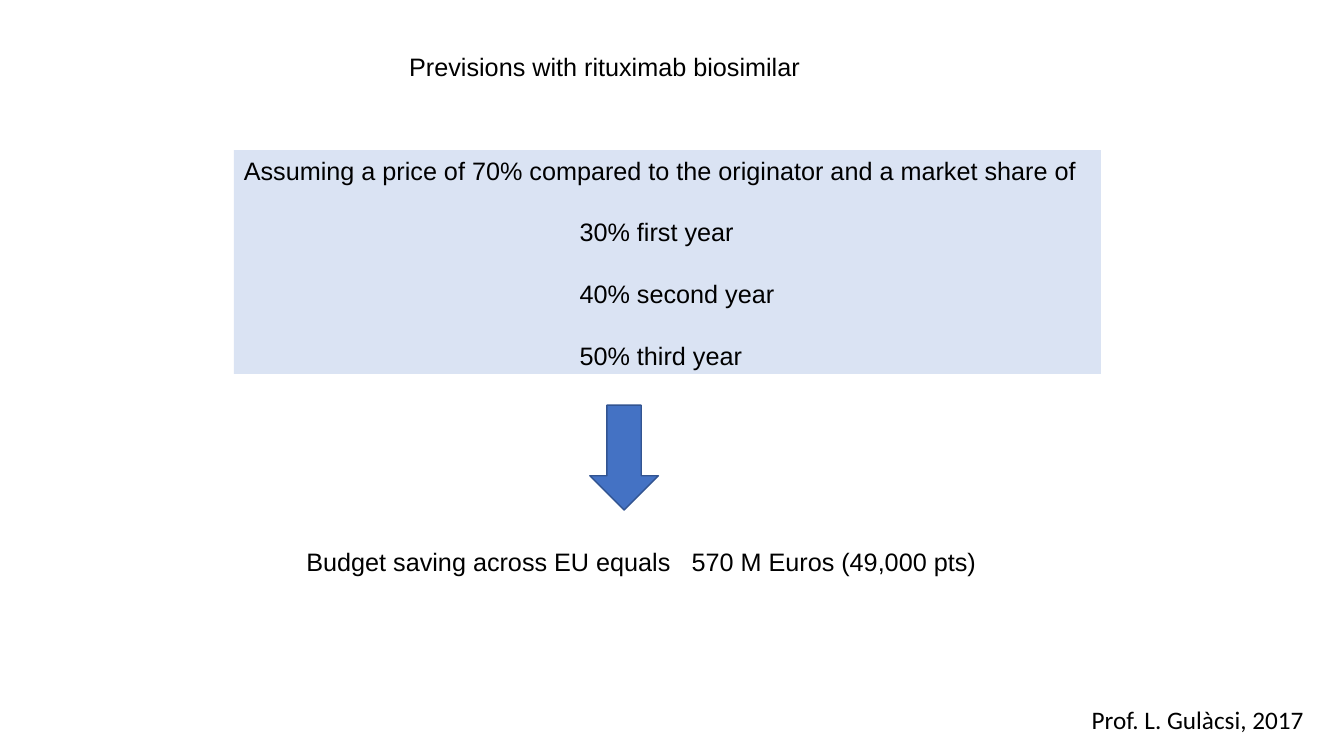
from lxml.etree import SubElement
from pptx import Presentation
from pptx.dml.color import RGBColor
from pptx.enum.shapes import MSO_SHAPE
from pptx.enum.text import MSO_ANCHOR, PP_ALIGN
from pptx.oxml.ns import qn
from pptx.util import Inches, Pt

BLACK = RGBColor(0x00, 0x00, 0x00)
PALE = RGBColor(0xDA, 0xE3, 0xF3)
BLUE = RGBColor(0x44, 0x72, 0xC4)
NAVY = RGBColor(0x32, 0x54, 0x91)


class Board:
    """Holds the text style and the current slide."""

    def __init__(self, slide):
        self.slide = slide
        self.style = {"name": "Arial", "size": Pt(18)}

    def line(self, par, text, **style):
        par.text = text
        par.alignment = PP_ALIGN.LEFT
        for key, value in {**self.style, **style}.items():
            setattr(par.font, key, value)
        par.font.color.rgb = BLACK

    def label(self, text, area, wrap=False, tab=None, **style):
        box = self.slide.shapes.add_textbox(*map(Inches, area))
        box.text_frame.word_wrap = wrap
        par = box.text_frame.paragraphs[0]
        if tab:
            stops = SubElement(par._p.get_or_add_pPr(), qn("a:tabLst"))
            SubElement(stops, qn("a:tab"), pos=str(Inches(tab)), algn="l")
        self.line(par, text, **style)

    def shape(self, kind, area, fill, edge=None):
        shape = self.slide.shapes.add_shape(kind, *map(Inches, area))
        shape.shadow.inherit = False
        shape.fill.solid()
        shape.fill.fore_color.rgb = fill
        if edge:
            shape.line.color.rgb = edge
            shape.line.width = Pt(1)
        else:
            shape.line.fill.background()
        return shape

    def panel(self, head, items, area, fill, indent, gap):
        frame = self.shape(MSO_SHAPE.RECTANGLE, area, fill).text_frame
        frame.word_wrap = True
        frame.vertical_anchor = MSO_ANCHOR.TOP
        self.line(frame.paragraphs[0], head)
        for item in items:
            par = frame.add_paragraph()
            par.space_before = Pt(gap)
            par._p.get_or_add_pPr().set("marL", str(Inches(indent)))
            self.line(par, item)


def main():
    deck = Presentation()
    deck.slide_width, deck.slide_height = Inches(13.33), Inches(7.5)
    board = Board(deck.slides.add_slide(deck.slide_layouts[6]))

    # Title
    board.label("Previsions with rituximab biosimilar", (3.96, 0.46, 4.11, 0.4))

    # Assumptions
    board.panel(
        "Assuming a price of 70% compared to the originator and a market share of",
        ["30% first year", "40% second year", "50% third year"],
        (2.32, 1.49, 8.6, 2.22), PALE, indent=3.33, gap=22.4)

    # Arrow to the result
    board.shape(MSO_SHAPE.DOWN_ARROW, (5.85, 4.02, 0.68, 1.04), BLUE, NAVY)

    # Result
    board.label("Budget saving across EU equals\t570 M Euros (49,000 pts)",
                (2.94, 5.37, 6.91, 0.4), wrap=True, tab=3.82)

    # Credit
    board.label("Prof. L. Gulàcsi, 2017", (10.73, 6.94, 2.33, 0.4), name="Calibri")

    deck.save("out.pptx")


if __name__ == "__main__":
    main()
